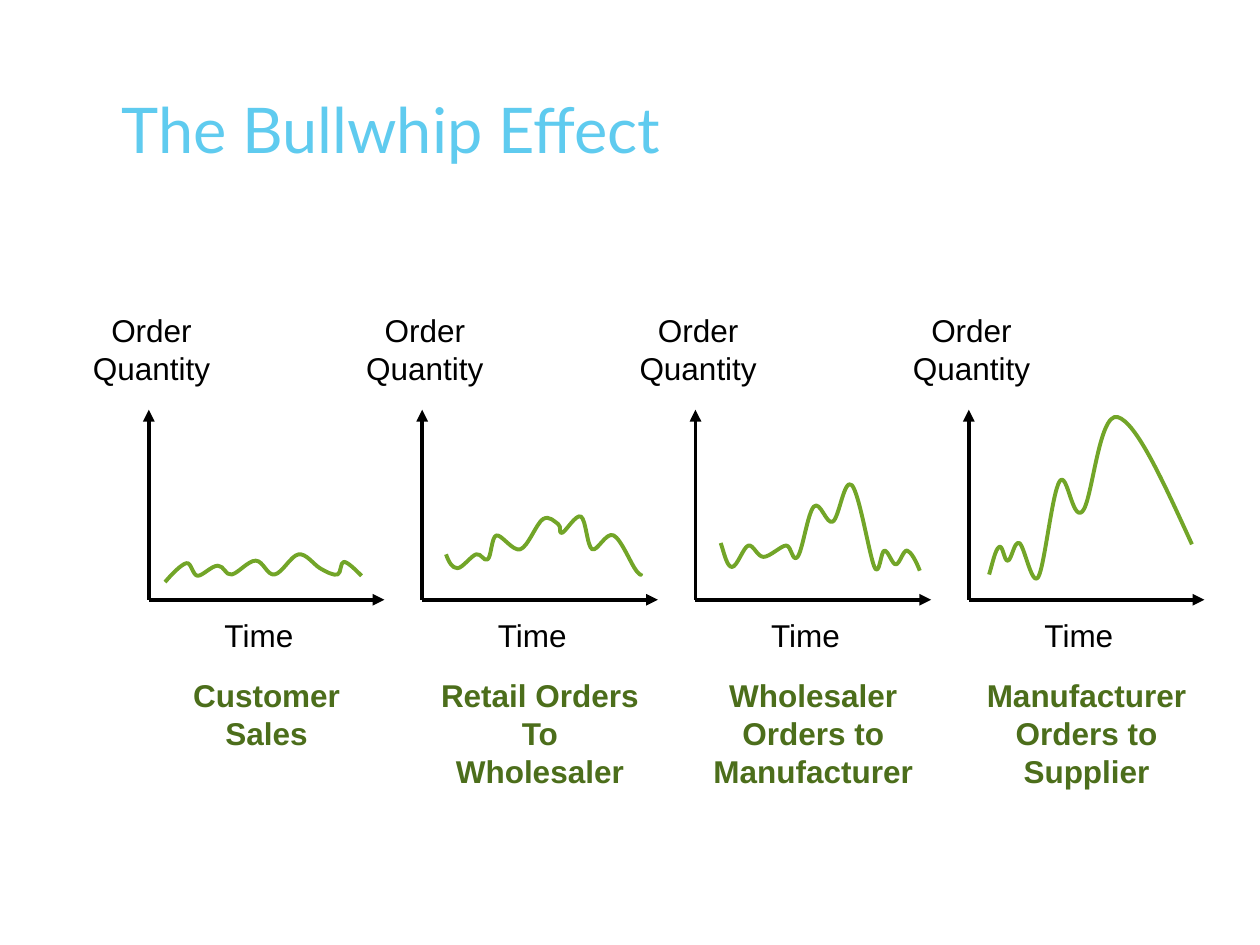
from lxml import etree
from pptx import Presentation
from pptx.dml.color import RGBColor
from pptx.enum.shapes import MSO_CONNECTOR
from pptx.enum.text import MSO_ANCHOR, MSO_AUTO_SIZE, PP_ALIGN
from pptx.oxml.ns import qn
from pptx.util import Cm, Pt

LINE = MSO_CONNECTOR.STRAIGHT
TOP = MSO_ANCHOR.TOP
NO_FIT = MSO_AUTO_SIZE.NONE
LEFT, MID = PP_ALIGN.LEFT, PP_ALIGN.CENTER
HUES = {"title": "5FCBEF", "axis": "000000", "name": "4C6E1B", "curve": "72A528"}
INK = {key: RGBColor.from_string(hue) for key, hue in HUES.items()}
UNIT = Cm(0.0254)

PLOTS = [
    ("Customer Sales", [
        (131, 462), (148, 447), (157, 457), (173, 449), (184, 456), (203, 445),
        (218, 456), (237, 440), (254, 451), (268, 456), (273, 446), (287, 457)]),
    ("Retail Orders\nTo Wholesaler", [
        (354, 440), (363, 451), (378, 440), (387, 444), (394, 425), (413, 436), (431, 412),
        (443, 416), (446, 423), (461, 410), (470, 436), (487, 425), (505, 453), (509, 455)]),
    ("Wholesaler\nOrders to\nManufacturer", [
        (572, 431), (581, 450), (594, 433), (606, 442), (624, 433), (633, 442), (646, 402),
        (661, 414), (676, 385), (694, 450), (702, 437), (711, 448), (720, 437), (730, 453)]),
    ("Manufacturer\nOrders to\nSupplier", [
        (785, 456), (793, 434), (800, 445), (809, 431), (824, 458),
        (841, 382), (859, 406), (887, 331), (946, 432)]),
]

deck = Presentation()
deck.slide_width, deck.slide_height = Cm(25.4), Cm(19.05)
slide = deck.slides.add_slide(deck.slide_layouts[5])
shapes = slide.shapes


def add_text(text, x, y, w, h, ink, bold=False, wrap=True):
    box = shapes.add_textbox(Cm(x), Cm(y), Cm(w), Cm(h))
    frame = box.text_frame
    frame.word_wrap = wrap
    frame.text = text
    for para in frame.paragraphs:
        para.alignment = MID
        font = para.font
        font.name, font.size, font.bold = "Arial", Pt(18), bold
        font.color.rgb = ink


def add_axis(x, y, x2, y2):
    axis = shapes.add_connector(LINE, Cm(x), Cm(y), Cm(x2), Cm(y2))
    axis.line.color.rgb = INK["axis"]
    axis.line.width = Pt(2.25)
    etree.SubElement(axis.element.spPr.find(qn("a:ln")), qn("a:tailEnd"), type="triangle")
    etree.SubElement(axis.element.spPr, qn("a:effectLst"))


title = shapes.title
title.left, title.top, title.width, title.height = Cm(0), Cm(1.7), Cm(17.63), Cm(3.66)
frame = title.text_frame
frame.text = "The Bullwhip Effect"
frame.auto_size = NO_FIT
frame.vertical_anchor = TOP
frame.margin_left = Cm(2.45)
para = frame.paragraphs[0]
para.alignment = LEFT
para.font.name, para.font.size = "Lato", Pt(36)
para.font.color.rgb = INK["title"]

for i, (name, knots) in enumerate(PLOTS):
    x = 3 + 5.51 * i
    rows = name.count("\n") + 1
    add_axis(x, 12.09, x, 8.26)
    add_axis(x, 12.09, x + 4.75, 12.09)
    add_text("Order\nQuantity", x - 1.52, 6.15, 3.15, 1.8, INK["axis"])
    add_text("Time", x + 1.27, 12.29, 1.9, 1.04, INK["axis"])
    add_text(name, x, 13.51, 4.75, 0.28 + 0.76 * max(rows, 2), INK["name"], True, rows == 1)

    slopes = [((c - a) / 6, (d - b) / 6) for (a, b), (c, d) in zip(knots, knots[2:])]
    ins = [(a - u, b - v) for (a, b), (u, v) in zip(knots[1:], slopes)]
    outs = [(a + u, b + v) for (a, b), (u, v) in zip(knots[1:], slopes)]
    first = [(a + b) / 2 for a, b in zip(knots[0], ins[0])]
    last = [(a + b) / 2 for a, b in zip(knots[-1], outs[-1])]
    bends = zip([first] + outs, ins + [last], knots[1:])
    spots = [(round(a), round(b)) for bend in bends for a, b in bend]

    pen = shapes.build_freeform(*knots[0], scale=UNIT)
    pen.add_line_segments(spots, close=False)
    curve = pen.convert_to_shape()
    curve.shadow.inherit = False
    curve.fill.background()
    curve.line.color.rgb = INK["curve"]
    curve.line.width = Pt(2.25)
    track = curve.element.find(".//" + qn("a:path"))
    steps = track.findall(qn("a:lnTo"))
    for k in range(0, len(steps), 3):
        cubic = etree.SubElement(track, qn("a:cubicBezTo"))
        for step in steps[k:k + 3]:
            cubic.append(step[0])
            track.remove(step)

deck.save("out.pptx")
